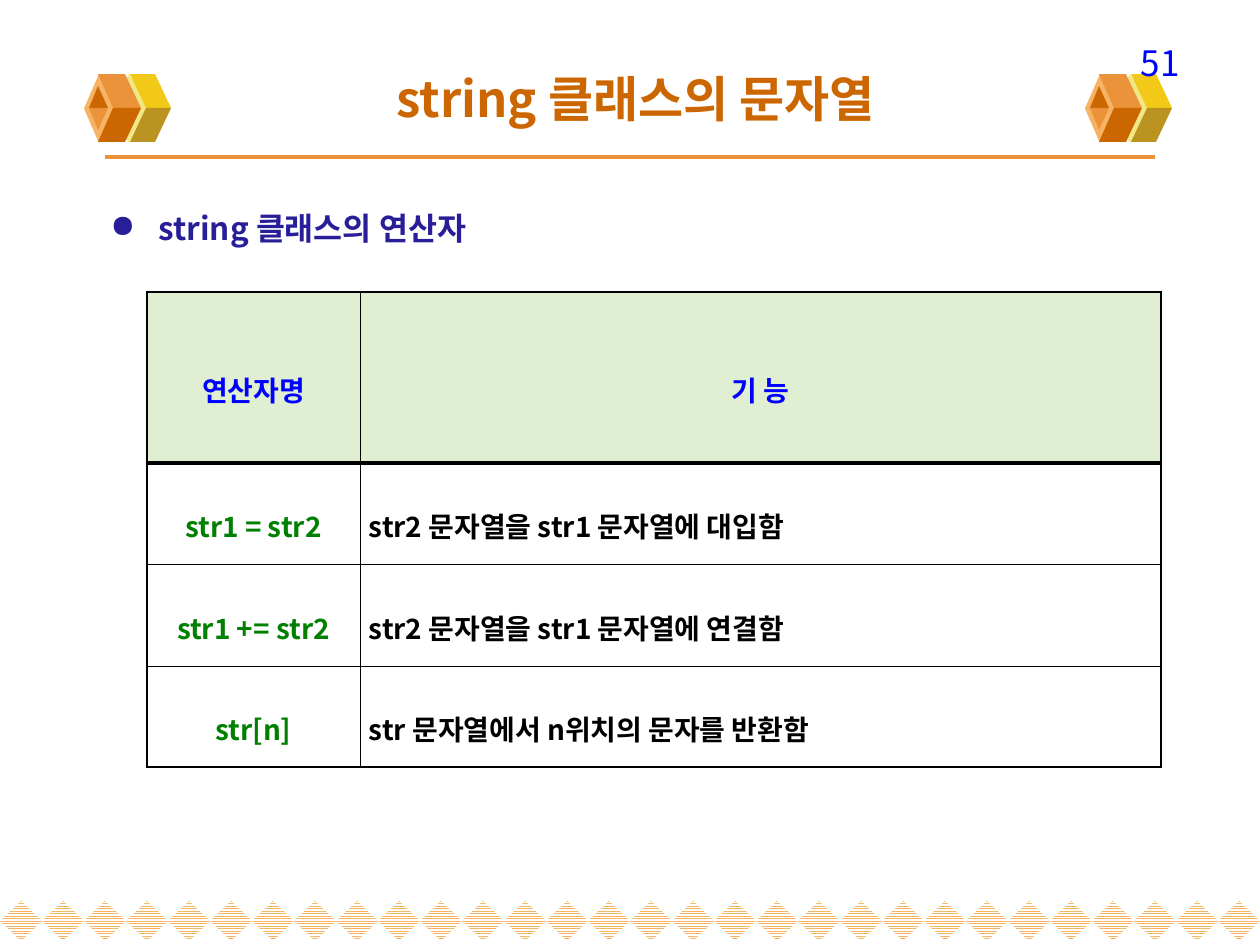
from lxml import etree
from pptx import Presentation
from pptx.dml.color import RGBColor
from pptx.enum.dml import MSO_PATTERN
from pptx.enum.shapes import MSO_CONNECTOR, MSO_SHAPE
from pptx.enum.text import MSO_ANCHOR, PP_ALIGN
from pptx.oxml.ns import qn
from pptx.util import Emu, Pt

DIAMOND = MSO_SHAPE.DIAMOND
STRAIGHT = MSO_CONNECTOR.STRAIGHT
STRIPES = MSO_PATTERN.NARROW_HORIZONTAL
TOP, MIDDLE = MSO_ANCHOR.TOP, MSO_ANCHOR.MIDDLE
LEFT, CENTER, RIGHT, JUSTIFY = PP_ALIGN.LEFT, PP_ALIGN.CENTER, PP_ALIGN.RIGHT, PP_ALIGN.JUSTIFY

EMU_PER_PX = 914400 / 126
FONT = "Noto Sans CJK KR"
COLORS = {
    "white": "FFFFFF", "black": "000000", "blue": "0000FF", "green": "008000",
    "navy": "271E98", "mint": "E0EED1", "cream": "F1E785", "yellow": "F3C917",
    "olive": "BB9321", "peach": "F5B363", "orange": "EB933B", "rust": "CC6600",
}
THIN, OUTER, HEADER_RULE = 0.28, 1.7, 1.98

TILE_COUNT, TILE_WIDTH = 30, 42
ICON_SHIFTS = (0, 1001)
ICON_AXIS = 108
ICON_PARTS = [
    ((108, 74, 42, 69), "cream",
     [("yellow", "olive", [(146, 108), (171, 108), (155, 74), (130, 74)])]),
    ((84, 74, 30, 69), "peach",
     [("orange", "rust", [(113, 108), (141, 108), (125, 74), (98, 74)]),
      ("rust", "orange", [(98, 86), (89, 108), (108, 108)])]),
]
COLUMN_WIDTHS = (213, 801)
ROW_HEIGHTS = (171, 101, 102, 101)
OPERATORS = [
    ("연산자명", "기 능"),
    ("str1 = str2", "str2 문자열을 str1 문자열에 대입함"),
    ("str1 += str2", "str2 문자열을 str1 문자열에 연결함"),
    ("str[n]", "str 문자열에서 n위치의 문자를 반환함"),
]


def px(value):
    return Emu(round(value * EMU_PER_PX))


def color(name):
    return RGBColor.from_string(COLORS[name])


class SlideBuilder:
    """Draws styled elements on one slide, with lengths in px."""

    def __init__(self, slide):
        self.slide = slide
        self.shapes = slide.shapes

    def paint(self, shape, fill):
        shape.shadow.inherit = False
        shape.fill.solid()
        shape.fill.fore_color.rgb = color(fill)
        shape.line.fill.background()

    def diamond(self, box, fill):
        shape = self.shapes.add_shape(DIAMOND, *map(px, box))
        self.paint(shape, fill)
        return shape

    def striped_diamond(self, box):
        fill = self.diamond(box, "white").fill
        fill.patterned()
        fill.pattern = STRIPES
        fill.fore_color.rgb = color("peach")
        fill.back_color.rgb = color("white")

    def polygon(self, points, fill):
        builder = self.shapes.build_freeform(*points[0], scale=EMU_PER_PX)
        builder.add_line_segments(points[1:], close=True)
        self.paint(builder.convert_to_shape(), fill)

    def icon(self, shift):
        for (left, top, width, height), fill, faces in ICON_PARTS:
            self.diamond((left + shift, top, width, height), fill)
            for upper, lower, points in faces:
                self.polygon([(x + shift, y) for x, y in points], upper)
                self.polygon([(x + shift, 2 * ICON_AXIS - y) for x, y in points], lower)

    def line(self, start, end, stroke, width):
        connector = self.shapes.add_connector(STRAIGHT, *map(px, start + end))
        connector.line.color.rgb = color(stroke)
        connector.line.width = Pt(width)
        etree.SubElement(connector._element.spPr, qn("a:effectLst"))

    def fill_text(self, frame, text, size, ink, bold=True, **paragraph_format):
        paragraph = frame.paragraphs[0]
        for name, value in paragraph_format.items():
            setattr(paragraph, name, value)
        run = paragraph.add_run()
        run.text = text
        for name, value in {"name": FONT, "size": Pt(size), "bold": bold}.items():
            setattr(run.font, name, value)
        run.font.color.rgb = color(ink)
        etree.SubElement(run._r.get_or_add_rPr(), qn("a:ea"), typeface=FONT)
        return paragraph

    def text(self, box, text, size, ink, bold=True, alignment=LEFT, anchor=TOP):
        frame = self.shapes.add_textbox(*map(px, box)).text_frame
        frame.word_wrap = True
        frame.vertical_anchor = anchor
        return self.fill_text(frame, text, size, ink, bold, alignment=alignment)

    def bullet(self, box, text, size, ink, indent):
        properties = self.text(box, text, size, ink)._p.get_or_add_pPr()
        properties.set("marL", str(px(indent)))
        properties.set("indent", str(px(-indent)))
        etree.SubElement(properties, qn("a:buChar"), char="●")

    def border(self, cell, side, width):
        line = etree.SubElement(cell._tc.get_or_add_tcPr(), qn(f"a:ln{side}"), w=str(Pt(width)))
        fill = etree.SubElement(line, qn("a:solidFill"))
        etree.SubElement(fill, qn("a:srgbClr"), val=COLORS["black"])

    def cell(self, cell, text, row, column):
        last_row, last_column = len(ROW_HEIGHTS) - 1, len(COLUMN_WIDTHS) - 1
        margins = {"margin_left": 9, "margin_right": 9, "margin_top": 3, "margin_bottom": 3}
        for name, value in margins.items():
            setattr(cell, name, px(value))
        cell.vertical_anchor = MIDDLE
        horizontal = {0: OUTER, 1: HEADER_RULE, last_row + 1: OUTER}
        widths = {
            "L": OUTER if column == 0 else THIN,
            "R": OUTER if column == last_column else THIN,
            "T": horizontal.get(row, THIN),
            "B": horizontal.get(row + 1, THIN),
        }
        for side, width in widths.items():
            self.border(cell, side, width)
        if row == 0:
            cell.fill.solid()
            cell.fill.fore_color.rgb = color("mint")
            ink, alignment = "blue", CENTER
        else:
            cell.fill.background()
            ink, alignment = ("green", CENTER) if column == 0 else ("black", JUSTIFY)
        self.fill_text(cell.text_frame, text, 16, ink, alignment=alignment, line_spacing=1.6)

    def table(self, left, top, rows):
        box = (left, top, sum(COLUMN_WIDTHS), sum(ROW_HEIGHTS))
        table = self.shapes.add_table(len(rows), len(COLUMN_WIDTHS), *map(px, box)).table
        table.first_row = table.horz_banding = False
        for column, width in zip(table.columns, COLUMN_WIDTHS):
            column.width = px(width)
        for row, height in zip(table.rows, ROW_HEIGHTS):
            row.height = px(height)
        for row, texts in enumerate(rows):
            for column, text in enumerate(texts):
                self.cell(table.cell(row, column), text, row, column)


def main():
    presentation = Presentation()
    presentation.slide_width, presentation.slide_height = px(1260), px(945)
    builder = SlideBuilder(presentation.slides.add_slide(presentation.slide_layouts[6]))
    for index in range(TILE_COUNT):
        builder.striped_diamond((index * TILE_WIDTH, 901, TILE_WIDTH, 40))
    builder.line((105, 157), (1155, 157), "orange", 2.25)
    for shift in ICON_SHIFTS:
        builder.icon(shift)
    builder.text((898, 35, 294, 38), "51", 20, "blue", bold=False, alignment=RIGHT)
    builder.text((63, 38, 1134, 120), " string 클래스의 문자열", 28, "rust",
                 alignment=CENTER, anchor=MIDDLE)
    builder.bullet((98, 203, 1092, 89), "string 클래스의 연산자", 18, "navy", 48)
    builder.table(147, 292, OPERATORS)
    presentation.save("out.pptx")


if __name__ == "__main__":
    main()
